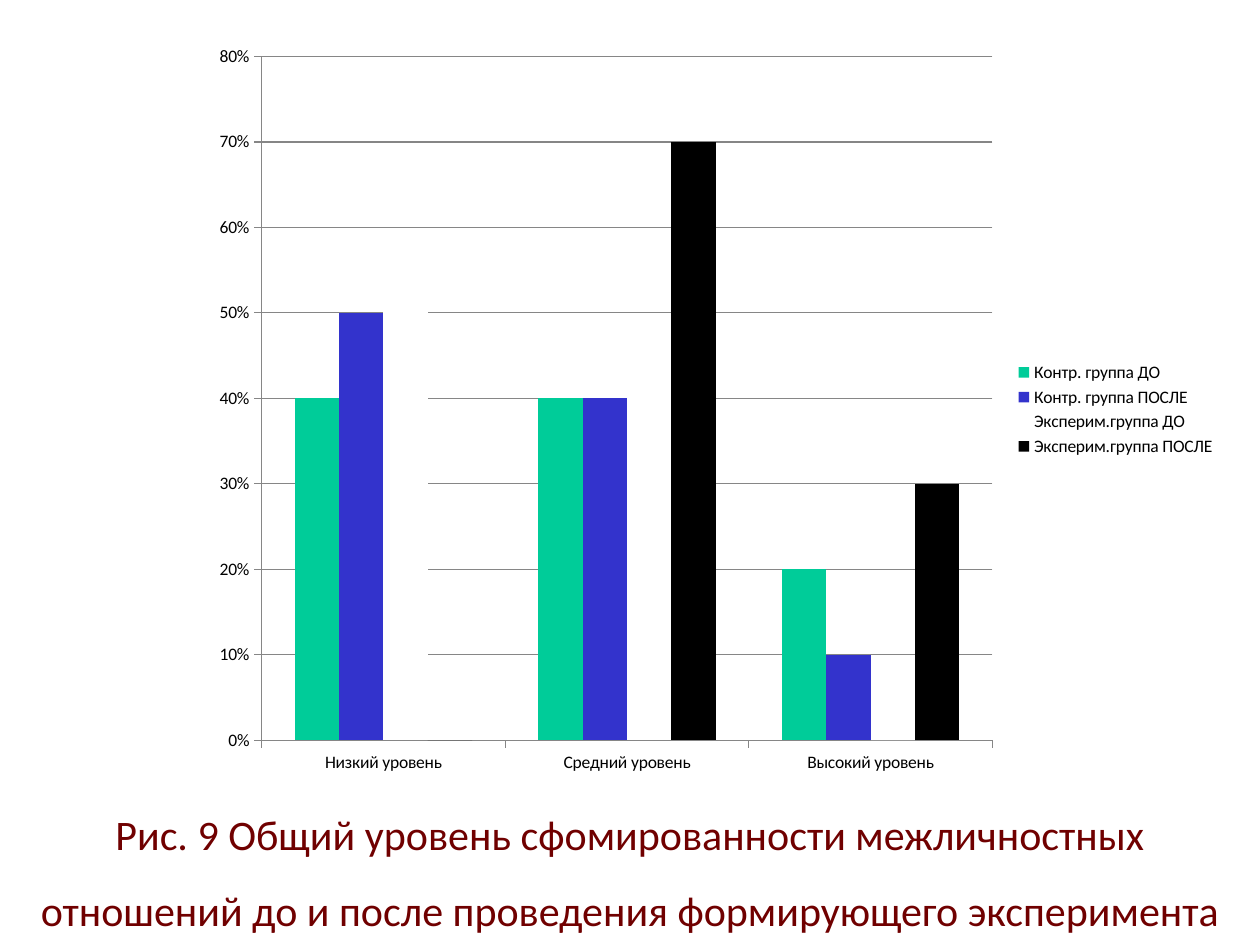
from pptx import Presentation
from pptx.chart.data import CategoryChartData
from pptx.dml.color import RGBColor
from pptx.enum.chart import XL_CHART_TYPE, XL_LEGEND_POSITION, XL_TICK_MARK
from pptx.enum.text import PP_ALIGN
from pptx.util import Inches, Pt

COLUMNS = XL_CHART_TYPE.COLUMN_CLUSTERED
LEGEND_RIGHT = XL_LEGEND_POSITION.RIGHT
TICK_OUTSIDE = XL_TICK_MARK.OUTSIDE
CENTER = PP_ALIGN.CENTER

COLORS = {
    "caption": "700000",
    "text": "000000",
    "grid": "868686",
    "control_before": "00CC99",
    "control_after": "3333CC",
    "experiment_before": "FFFFFF",
    "experiment_after": "000000",
}
LEVELS = ["Низкий уровень", "Средний уровень", "Высокий уровень"]
GROUPS = [
    ("Контр. группа ДО", "control_before", (0.4, 0.4, 0.2)),
    ("Контр. группа ПОСЛЕ", "control_after", (0.5, 0.4, 0.1)),
    ("Эксперим.группа ДО", "experiment_before", (0.57, 0.43, 0)),
    ("Эксперим.группа ПОСЛЕ", "experiment_after", (0, 0.7, 0.3)),
]
CAPTION = (
    "Рис. 9 Общий уровень сфомированности межличностных "
    "отношений до и после проведения формирующего эксперимента"
)


class SlideBuilder:
    """Hold the style and the current slide; lengths are in grid units of one inch."""

    font_name = "Calibri"
    unit = Inches(1)

    def __init__(self, presentation):
        self.slide = presentation.slides.add_slide(presentation.slide_layouts[6])

    def box(self, *lengths):
        return [int(length * self.unit) for length in lengths]

    def style_font(self, font, size, color):
        font.name = self.font_name
        font.size = Pt(size)
        font.color.rgb = RGBColor.from_string(COLORS[color])

    def style_line(self, line):
        line.color.rgb = RGBColor.from_string(COLORS["grid"])
        line.width = Pt(0.75)

    def caption(self, text, left, top, width, height):
        text_frame = self.slide.shapes.add_textbox(
            *self.box(left, top, width, height)
        ).text_frame
        text_frame.word_wrap = True
        text_frame.text = text
        paragraph = text_frame.paragraphs[0]
        paragraph.alignment = CENTER
        paragraph.line_spacing = 1.5
        self.style_font(paragraph.runs[0].font, 24, "caption")

    def column_chart(self, categories, groups, left, top, width, height):
        data = CategoryChartData(number_format="0%")
        data.categories = categories
        for name, _, values in groups:
            data.add_series(name, values)
        chart = self.slide.shapes.add_chart(
            COLUMNS, *self.box(left, top, width, height), data
        ).chart
        chart.has_title = False
        self.style_font(chart.font, 10, "text")
        chart.has_legend = True
        chart.legend.position = LEGEND_RIGHT
        chart.legend.include_in_layout = False

        plot = chart.plots[0]
        plot.gap_width = 150
        plot.vary_by_categories = False
        for series, (_, color, _) in zip(plot.series, groups):
            series.invert_if_negative = False
            series.format.fill.solid()
            series.format.fill.fore_color.rgb = RGBColor.from_string(COLORS[color])

        for axis in (chart.category_axis, chart.value_axis):
            axis.major_tick_mark = TICK_OUTSIDE
            self.style_line(axis.format.line)
        value_axis = chart.value_axis
        value_axis.minimum_scale, value_axis.maximum_scale = 0, 0.8
        value_axis.major_unit = 0.1
        value_axis.has_major_gridlines = True
        self.style_line(value_axis.major_gridlines.format.line)
        value_axis.tick_labels.number_format = "0%"
        value_axis.tick_labels.number_format_is_linked = False


def main():
    presentation = Presentation()
    presentation.slide_width = Inches(10)
    presentation.slide_height = Inches(7.5)
    builder = SlideBuilder(presentation)
    builder.caption(CAPTION, 0, 6.17, 10, 0.81)
    builder.column_chart(LEVELS, GROUPS, 1.58, 0.25, 8.17, 6)
    presentation.save("out.pptx")


if __name__ == "__main__":
    main()
